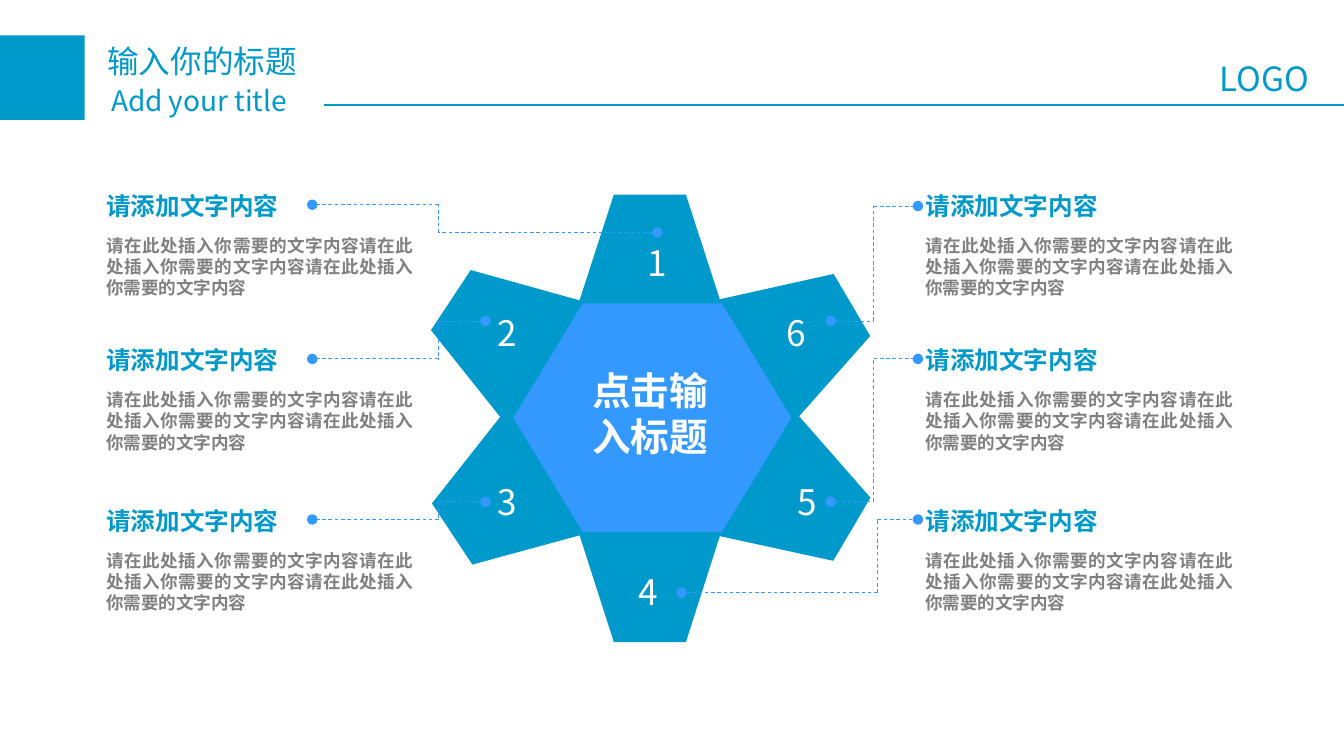
import pptx
import pptx.util
import pptx.dml.color
import pptx.enum.dml
import pptx.enum.shapes
import pptx.enum.text
import pptx.oxml
import pptx.oxml.ns

Inches = pptx.util.Inches
RGBColor = pptx.dml.color.RGBColor
Align = pptx.enum.text.PP_ALIGN
Kind = pptx.enum.shapes.MSO_SHAPE

TEAL = RGBColor(0x00, 0x99, 0xCC)
BLUE = RGBColor(0x33, 0x99, 0xFF)
GRAY = RGBColor(0x80, 0x80, 0x80)
WHITE = RGBColor(0xFF, 0xFF, 0xFF)
NOTO = "Noto Sans CJK SC"

HEAD = "请添加文字内容"
BODY = "请在此处插入你需要的文字内容" * 3

# Petals: left, top, width, height, turn
PETALS = [
    (4.57, 1.54, 1.14, 1.76, 0),
    (5.41, 1.98, 1.14, 1.76, 59.5),
    (3.73, 1.98, 1.14, 1.76, 303.5),
    (4.57, 3.3, 1.14, 1.78, 0),
    (5.4, 2.86, 1.16, 1.76, 300.5),
    (3.73, 2.86, 1.16, 1.76, 56.5),
]

# Petal numbers: left, top
DIGITS = {
    "1": (5, 1.91), "2": (3.82, 2.46), "3": (3.82, 3.8),
    "4": (4.93, 4.51), "5": (6.19, 3.8), "6": (6.1, 2.46),
}

# Links: start x, start y, bend x, end x, end y
LINKS = [
    (5.2, 1.84, 3.47, 2.47, 1.62),
    (3.84, 2.54, 3.47, 2.47, 2.84),
    (3.84, 3.97, 3.47, 2.47, 4.11),
    (5.39, 4.69, 6.94, 7.26, 4.11),
    (6.57, 3.97, 6.91, 7.26, 2.84),
    (6.57, 2.54, 6.91, 7.26, 1.63),
]


def add_text(slide, box, text, size, color, bold=False, font=NOTO,
             align=Align.LEFT, inset=True, wrap=True):
    shape = slide.shapes.add_textbox(*map(Inches, box))
    frame = shape.text_frame
    frame.word_wrap = wrap
    if not inset:
        frame.margin_left = frame.margin_right = 0
        frame.margin_top = frame.margin_bottom = 0
    frame.text = text
    para = frame.paragraphs[0]
    para.alignment = align
    style = para.runs[0].font
    style.name = font
    style.size = pptx.util.Pt(size)
    style.bold = bold
    style.color.rgb = color


def add_block(slide, kind, box, color, turn=0):
    shape = slide.shapes.add_shape(kind, *map(Inches, box))
    shape.shadow.inherit = False
    shape.fill.solid()
    shape.fill.fore_color.rgb = color
    shape.line.fill.background()
    shape.rotation = turn
    return shape


def add_line(slide, start, end, color, width, dash=False, dot=None):
    line = slide.shapes.add_connector(
        pptx.enum.shapes.MSO_CONNECTOR.STRAIGHT,
        *map(Inches, (*start, *end)))
    line.line.color.rgb = color
    line.line.width = pptx.util.Pt(width)
    if dash:
        line.line.dash_style = pptx.enum.dml.MSO_LINE.DASH
    space = pptx.oxml.ns.nsdecls("a")
    props = line._element.spPr
    if dot:
        mark = pptx.oxml.parse_xml(f'<a:{dot} {space} type="oval"/>')
        props.find(pptx.oxml.ns.qn("a:ln")).append(mark)
    props.append(pptx.oxml.parse_xml(f"<a:effectLst {space}/>"))


def add_link(slide, x, y, bend, end_x, end_y):
    points = [(x, y), (bend, y), (bend, end_y), (end_x, end_y)]
    dots = ["headEnd", None, "tailEnd"]
    for start, end, dot in zip(points, points[1:], dots):
        add_line(slide, start, end, BLUE, 0.5, True, dot)


def add_note(slide, left, top):
    add_text(slide, (left, top, 2.47, 0.23), HEAD, 14, TEAL, True,
             "Arial", inset=False)
    add_text(slide, (left, top + 0.35, 2.43, 0.5), BODY, 10, GRAY, True,
             "Arial", Align.JUSTIFY, inset=False)


def main():
    deck = pptx.Presentation()
    deck.slide_width = Inches(10.63)
    deck.slide_height = Inches(5.91)
    slide = deck.slides.add_slide(deck.slide_layouts[6])

    # Header
    add_block(slide, Kind.RECTANGLE, (0, 0.28, 0.67, 0.67), TEAL)
    add_text(slide, (0.75, 0.28, 1.73, 0.4), "输入你的标题", 18, TEAL)
    add_text(slide, (0.78, 0.61, 1.73, 0.37), "Add your title", 16, TEAL)
    add_line(slide, (2.56, 0.83), (10.63, 0.83), TEAL, 0.75)
    add_text(slide, (9.55, 0.41, 0.96, 0.42), "LOGO", 19, TEAL, wrap=False)

    # Petals and numbers
    for *box, turn in PETALS:
        add_block(slide, Kind.HEXAGON, box, TEAL, turn)
    for digit, (left, top) in DIGITS.items():
        add_text(slide, (left, top, 0.39, 0.33), digit, 20, WHITE,
                 align=Align.CENTER, inset=False)

    # Notes on both sides
    for left in (0.84, 7.32):
        for top in (1.51, 2.73, 4):
            add_note(slide, left, top)

    # Dashed links
    for link in LINKS:
        add_link(slide, *link)

    # Centre
    core = add_block(slide, Kind.HEXAGON, (4.06, 2.4, 2.2, 1.81), BLUE)
    core.adjustments[0] = 0.304
    add_text(slide, (4.54, 2.9, 1.2, 0.73), "点击输入标题", 22, WHITE, True,
             align=Align.CENTER, inset=False)

    deck.save("out.pptx")


if __name__ == "__main__":
    main()
